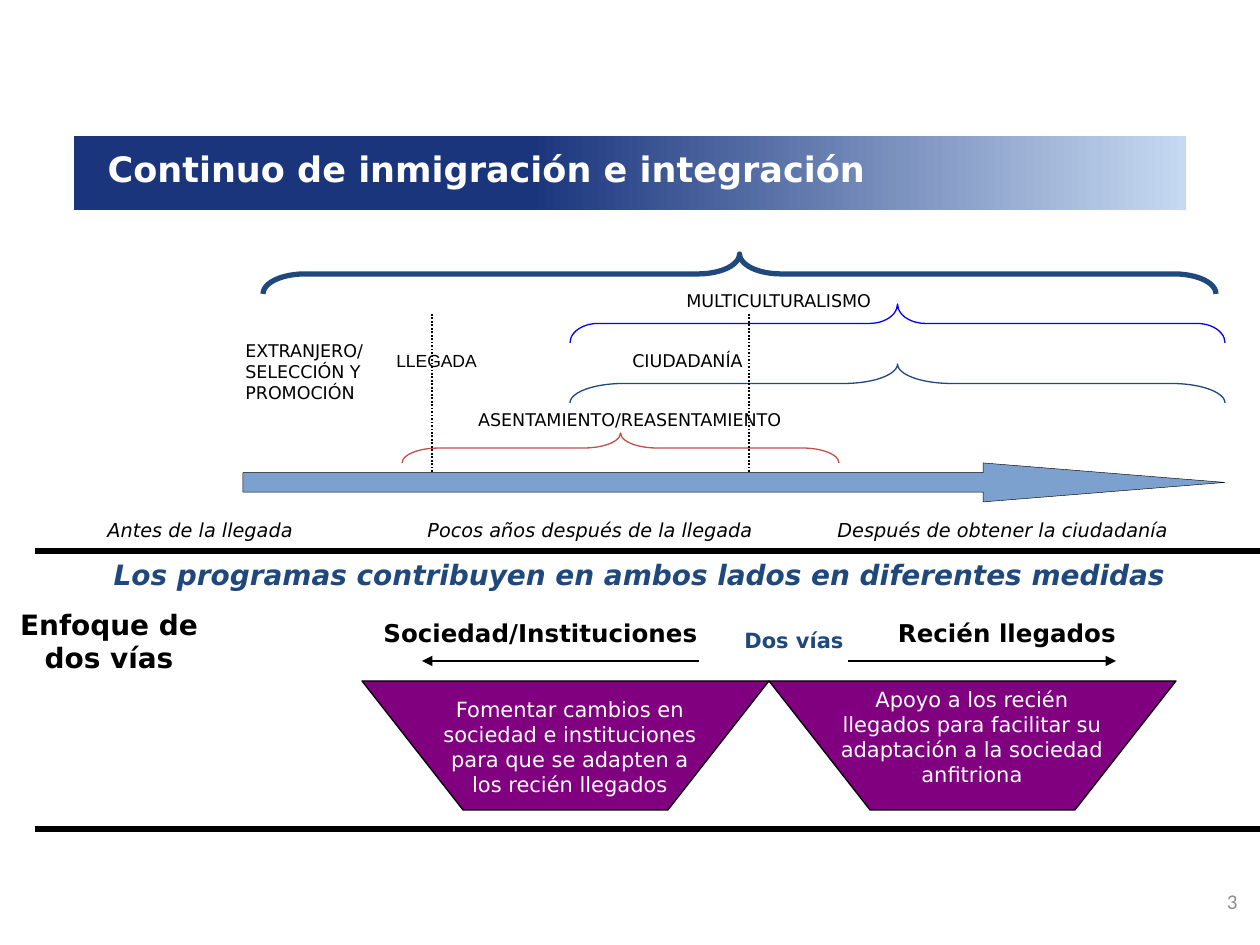
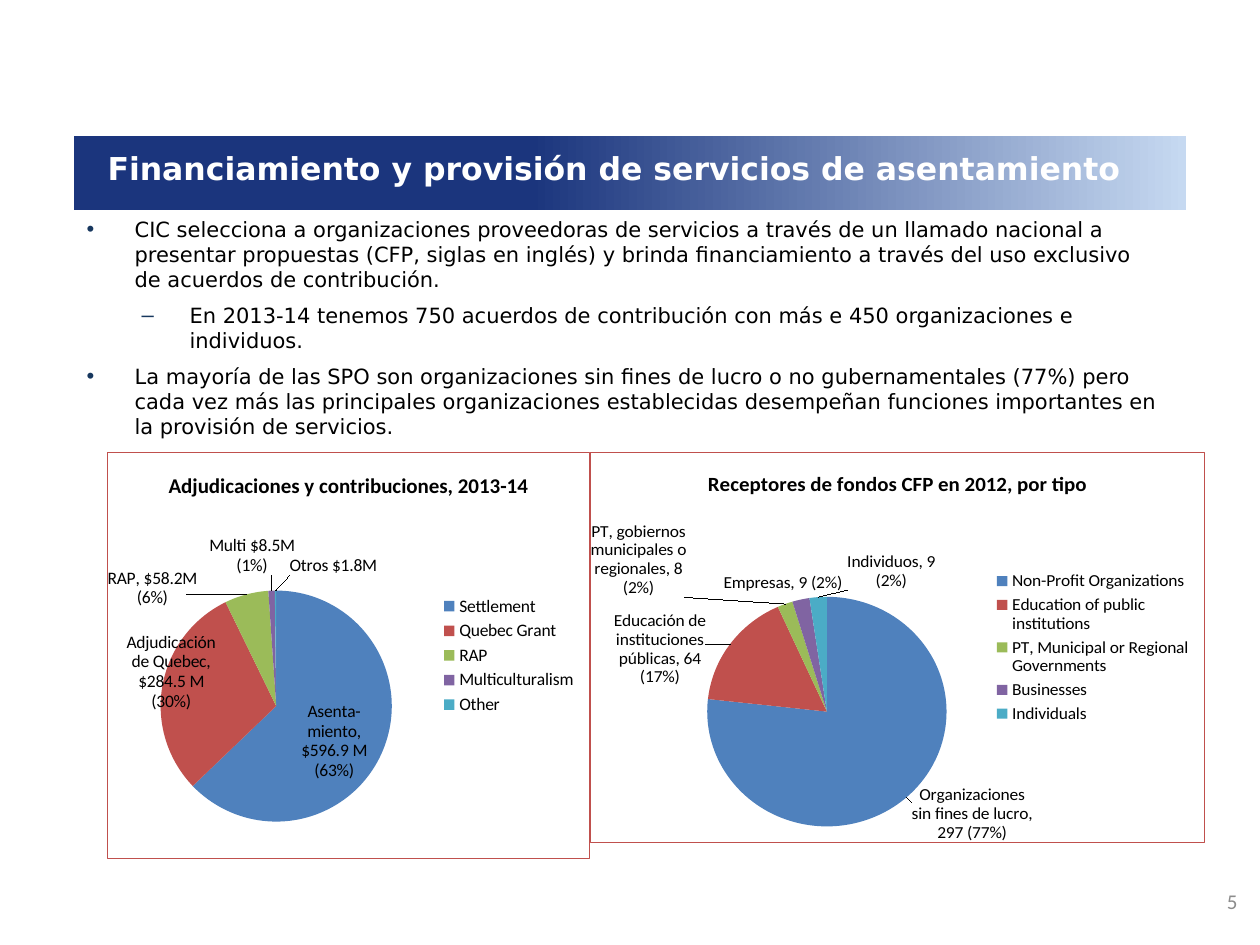
from lxml import etree
from pptx import Presentation
from pptx.chart.data import CategoryChartData
from pptx.dml.color import RGBColor
from pptx.enum.chart import XL_CHART_TYPE, XL_LABEL_POSITION, XL_LEGEND_POSITION
from pptx.enum.dml import MSO_LINE
from pptx.enum.shapes import MSO_CONNECTOR, MSO_SHAPE
from pptx.enum.text import MSO_ANCHOR, MSO_AUTO_SIZE, PP_ALIGN
from pptx.oxml import parse_xml
from pptx.oxml.ns import nsdecls, qn
from pptx.util import Pt

PX = 914400 / 126
LEFT, MID, RIGHT = PP_ALIGN.LEFT, PP_ALIGN.CENTER, PP_ALIGN.RIGHT
CENTER, OUTER = XL_LABEL_POSITION.CENTER, XL_LABEL_POSITION.OUTSIDE_END
SANS, CALIBRI, ARIAL = "DejaVu Sans", "Calibri", "Arial"

WHITE = RGBColor(0xFF, 0xFF, 0xFF)
BLACK = RGBColor(0, 0, 0)
GRAY = RGBColor(0x8C, 0x8C, 0x8C)
NAVY = RGBColor(0x1B, 0x35, 0x7D)
PALE = RGBColor(0xC6, 0xD9, 0xF1)
DEEP = RGBColor(0x1F, 0x49, 0x7D)
BLUE = RGBColor(0x4F, 0x81, 0xBD)
PURE = RGBColor(0, 0, 0xFF)
RED = RGBColor(0xC0, 0x50, 0x4D)
PURPLE = RGBColor(0x80, 0, 0x80)
MARK = RGBColor(0x17, 0x37, 0x5E)
SLICES = [BLUE, RED, RGBColor(0x9B, 0xBB, 0x59), RGBColor(0x80, 0x64, 0xA2),
          RGBColor(0x4B, 0xAC, 0xC6)]


def px(*sizes):
    return [round(size * PX) for size in sizes]


def style(item, size, color=BLACK, bold=False, italic=False, face=SANS):
    font = item.font
    font.size, font.name = Pt(size), face
    font.bold, font.italic = bold, italic
    font.color.rgb = color


def label(slide, box, text, size, align=MID, tabs=(), **look):
    shape = slide.shapes.add_textbox(*px(*box))
    shape.text_frame.word_wrap = True
    para = shape.text_frame.paragraphs[0]
    para.text = text
    para.alignment = align
    if tabs:
        stops = etree.SubElement(para._p.get_or_add_pPr(), qn("a:tabLst"))
        for stop in tabs:
            etree.SubElement(stops, qn("a:tab"), pos=str(px(stop)[0]), algn="l")
    style(para, size, **look)
    return shape


def outline(shape, color, width):
    shape.shadow.inherit = False
    shape.line.color.rgb = color
    shape.line.width = Pt(width)


def rule(slide, start, end, width, dash=None, arrow=False):
    line = slide.shapes.add_connector(MSO_CONNECTOR.STRAIGHT, *px(*start, *end))
    line.line.color.rgb = BLACK
    line.line.width = Pt(width)
    if dash:
        line.line.dash_style = dash
    if arrow:
        etree.SubElement(line.line._get_or_add_ln(), qn("a:tailEnd"), type="triangle")
    etree.SubElement(line._element.spPr, qn("a:effectLst"))


def brace(slide, box, bend, color, width=0.75):
    """Lay a left brace on its side so that it fills the box."""
    x, y, w, h = box
    shape = slide.shapes.add_shape(
        MSO_SHAPE.LEFT_BRACE, *px(x + (w - h) / 2, y + (h - w) / 2, h, w))
    shape.rotation = 90
    shape.adjustments[0] = bend
    shape.fill.background()
    outline(shape, color, width)


def frame(deck, layout, text, size, number):
    """Add a slide with its title band and number."""
    slide = deck.slides.add_slide(deck.slide_layouts[layout])
    band = slide.shapes.add_shape(MSO_SHAPE.RECTANGLE, *px(74, 136, 1112, 74))
    band.shadow.inherit = False
    band.line.fill.background()
    band.fill.gradient()
    band.fill.gradient_angle = 0
    for stop, spot, color in zip(band.fill.gradient_stops, (0.41, 1), (NAVY, PALE)):
        stop.position, stop.color.rgb = spot, color
    slide.shapes._spTree.insert(2, band._element)

    title = slide.shapes.title
    title.left, title.top, title.width, title.height = px(95, 126, 1102, 84)
    title.text_frame.text = text
    title.text_frame.vertical_anchor = MSO_ANCHOR.MIDDLE
    title.text_frame.auto_size = MSO_AUTO_SIZE.NONE
    para = title.text_frame.paragraphs[0]
    para.alignment = LEFT
    style(para, size, WHITE, bold=True)

    page = label(slide, (1134, 876, 116, 50), number, 12, RIGHT, color=GRAY, face=CALIBRI)
    page.text_frame.vertical_anchor = MSO_ANCHOR.MIDDLE
    return slide


def timeline(slide, x, y):
    arrow = slide.shapes.add_shape(MSO_SHAPE.RIGHT_ARROW, *px(x, y + 211, 982, 39))
    arrow.adjustments[0], arrow.adjustments[1] = 0.5, 6.2
    arrow.fill.solid()
    arrow.fill.fore_color.rgb = BLUE
    tint = arrow._element.spPr.find(".//" + qn("a:srgbClr"))
    etree.SubElement(tint, qn("a:alpha"), val="74000")
    outline(arrow, BLACK, 0.25)

    brace(slide, (x + 20, y + 2, 953, 40), 1.04, DEEP, 3)
    brace(slide, (x + 327, y + 52, 655, 39), 0.72, PURE)
    brace(slide, (x + 327, y + 112, 655, 39), 1.38, DEEP)
    brace(slide, (x + 159, y + 181, 437, 30), 1.22, RED)
    for left in (189, 506):
        rule(slide, (x + left, y + 62), (x + left, y + 220), 1, MSO_LINE.ROUND_DOT)

    for left, top, width, height, text, align, face in (
            (-10, 82, 159, 77, "EXTRANJERO/ SELECCIÓN Y PROMOCIÓN", LEFT, SANS),
            (119, 92, 149, 34, "LLEGADA", MID, ARIAL),
            (377, 92, 149, 34, "CIUDADANÍA", LEFT, SANS),
            (208, 151, 357, 34, "ASENTAMIENTO/REASENTAMIENTO", MID, SANS),
            (426, 32, 219, 34, "MULTICULTURALISMO", MID, SANS)):
        label(slide, (x + left, y + top, width, height), text, 10, align, face=face)
    label(slide, (x - 148, y + 260, 1155, 36),
          "Antes de la llegada\tPocos años después de la llegada\t"
          "Después de obtener la ciudadanía",
          11, LEFT, tabs=(320, 730), italic=True)


def trapeze(slide, x, y, w, h):
    inset = w // 4
    form = slide.shapes.build_freeform(x, y, scale=PX)
    form.add_line_segments([(x + inset, y + h), (x + w - inset, y + h), (x + w, y)])
    shape = form.convert_to_shape()
    shape.fill.solid()
    shape.fill.fore_color.rgb = PURPLE
    outline(shape, BLACK, 0.75)


def approach(slide, x, y):
    """Draw the two-way part below the timeline."""
    for top in (0, 278):
        rule(slide, (x + 35, y + top), (x + 1260, y + top), 3)
    label(slide, (x + 54, y, 1171, 47),
          "Los programas contribuyen en ambos lados en diferentes medidas",
          16, color=DEEP, bold=True, italic=True)
    label(slide, (x, y + 50, 218, 81), "Enfoque de dos vías", 16, bold=True)
    label(slide, (x + 670, y + 70, 248, 38), "Dos vías", 12, color=DEEP, bold=True)
    label(slide, (x + 362, y + 61, 357, 43), "Sociedad/Instituciones", 14, bold=True)
    label(slide, (x + 878, y + 61, 258, 42), "Recién llegados", 14, bold=True)
    for start, end in ((699, 422), (848, 1116)):
        rule(slide, (x + start, y + 110), (x + end, y + 110), 0.75, arrow=True)
    for left in (362, 769):
        trapeze(slide, x + left, y + 130, 407, 129)
    label(slide, (x + 430, y + 139, 280, 152),
          "Fomentar cambios en sociedad e instituciones para que se adapten a "
          "los recién llegados", 12, color=WHITE)
    label(slide, (x + 828, y + 129, 288, 115),
          "Apoyo a los recién llegados para facilitar su adaptación a la "
          "sociedad anfitriona", 12, color=WHITE)


def bullets(slide, box, items):
    body = slide.placeholders[1]
    body.left, body.top, body.width, body.height = px(*box)
    text = body.text_frame
    text.auto_size = MSO_AUTO_SIZE.NONE
    for i, (level, words) in enumerate(items):
        para = text.add_paragraph() if i else text.paragraphs[0]
        para.text, para.level = words, level
        para.space_before = Pt(6 if i else 0)
        props = para._p.get_or_add_pPr()
        props.set("marL", str(px((48, 103)[level])[0]))
        props.set("indent", str(px(-48)[0]))
        tint = etree.SubElement(props, qn("a:buClr"))
        etree.SubElement(tint, qn("a:srgbClr"), val=str(MARK))
        etree.SubElement(props, qn("a:buSzPct"), val="105000")
        etree.SubElement(props, qn("a:buChar"), char="•–"[level])
        style(para, 12)


def layout(inner, **places):
    """Build a manual chart layout from its named places."""
    target = '<c:layoutTarget val="inner"/>' if inner else ""
    modes = '<c:xMode val="edge"/><c:yMode val="edge"/>' if inner else ""
    rest = "".join(f'<c:{key} val="{val}"/>' for key, val in places.items())
    return parse_xml(f'<c:layout {nsdecls("c")}><c:manualLayout>{target}{modes}{rest}'
                     "</c:manualLayout></c:layout>")


def place(item, spot, plan):
    for old in item.findall(qn("c:layout")):
        item.remove(old)
    item.insert(spot, plan)


def pie(slide, box, title, plot, form, rows):
    """Rows hold category, value, label, label position and label shift."""
    data = CategoryChartData(number_format=form)
    data.categories = [row[0] for row in rows]
    data.add_series("Series 1", [row[1] for row in rows])
    chart = slide.shapes.add_chart(XL_CHART_TYPE.PIE, *px(*box), data).chart
    style(chart, 10, face=CALIBRI)
    chart.has_title = True
    chart.chart_title.text_frame.text = title
    style(chart.chart_title.text_frame.paragraphs[0], 12, bold=True, face=CALIBRI)
    chart.has_legend = True
    chart.legend.position = XL_LEGEND_POSITION.RIGHT
    chart.legend.include_in_layout = False
    chart.plots[0].vary_by_categories = True

    series = chart.plots[0].series[0]
    for i, (row, color) in enumerate(zip(rows, SLICES)):
        point = series.points[i]
        point.format.fill.solid()
        point.format.fill.fore_color.rgb = color
        tag = point.data_label
        tag.text_frame.text = row[2]
        for para in tag.text_frame.paragraphs:
            style(para, 10, face=CALIBRI)
        tag.position = row[3]
    series.data_labels.show_value = True
    series.data_labels.show_category_name = True

    space = chart._chartSpace
    for show in space.xpath(".//c:dLbl/c:showCatName"):
        show.set("val", "1")
    for tag, row in zip(space.xpath(".//c:dLbl"), rows):
        place(tag, 1, layout(False, x=row[4][0], y=row[4][1]))
    place(space.find(".//" + qn("c:plotArea")), 0,
          layout(True, **dict(zip("xywh", plot))))
    space.find(qn("c:chart")).addnext(parse_xml(
        f'<c:spPr {nsdecls("c", "a")}><a:noFill/><a:ln w="{Pt(0.75)}"><a:solidFill>'
        f'<a:srgbClr val="{RED}"/></a:solidFill></a:ln></c:spPr>'))


def continuum(deck):
    slide = frame(deck, 5, "Continuo de inmigración e integración", 20, "3")
    timeline(slide, 243, 252)
    approach(slide, 0, 551)


def funding(deck):
    slide = frame(deck, 1, "Financiamiento y provisión de servicios de asentamiento",
                  18, "5")
    bullets(slide, (74, 210, 1101, 223), [
        (0, "CIC selecciona a organizaciones proveedoras de servicios a través de un "
            "llamado nacional a presentar propuestas (CFP, siglas en inglés) y brinda "
            "financiamiento a través del uso exclusivo de acuerdos de contribución."),
        (1, "En 2013-14 tenemos 750 acuerdos de contribución con más e 450 "
            "organizaciones e individuos."),
        (0, "La mayoría de las SPO son organizaciones sin fines de lucro o no "
            "gubernamentales (77%) pero cada vez más las principales organizaciones "
            "establecidas desempeñan funciones importantes en la provisión de "
            "servicios.")])
    pie(slide, (107, 452, 483, 407), "Adjudicaciones y contribuciones, 2013-14",
        (0.11, 0.32, 0.48, 0.61), "0.0", [
            ("Settlement", 596.9, "Asenta-miento, $596.9 M\n(63%)", CENTER, (0.01, 0.03)),
            ("Quebec Grant", 284.5, "Adjudicación de Quebec,\n$284.5 M\n(30%)",
             CENTER, (-0.1, -0.06)),
            ("RAP", 58.2, "RAP, $58.2M (6%)", OUTER, (-0.12, 0.05)),
            ("Multiculturalism", 8.5, "Multi $8.5M (1%)", OUTER, (-0.04, -0.02)),
            ("Other", 1.8, "Otros $1.8M", OUTER, (0.12, -0.02))])
    pie(slide, (590, 452, 615, 407), "Receptores de fondos CFP en 2012, por tipo",
        (0.19, 0.33, 0.39, 0.67), "0", [
            ("Non-Profit Organizations", 297,
             "Organizaciones sin fines de lucro, 297 (77%)", OUTER, (0, 0)),
            ("Education of public institutions", 64,
             "Educación de instituciones públicas, 64 (17%)", OUTER, (-0.03, 0.12)),
            ("PT, Municipal or Regional Governments", 8,
             "PT, gobiernos municipales o regionales, 8 (2%)", OUTER, (-0.16, 0)),
            ("Businesses", 9, "Empresas, 9 (2%)", OUTER, (0.07, 0)),
            ("Individuals", 9, "Individuos, 9 (2%)", OUTER, (0.12, 0))])


def main():
    deck = Presentation()
    deck.slide_width, deck.slide_height = px(1260, 945)
    continuum(deck)
    funding(deck)
    deck.save("out.pptx")


if __name__ == "__main__":
    main()
